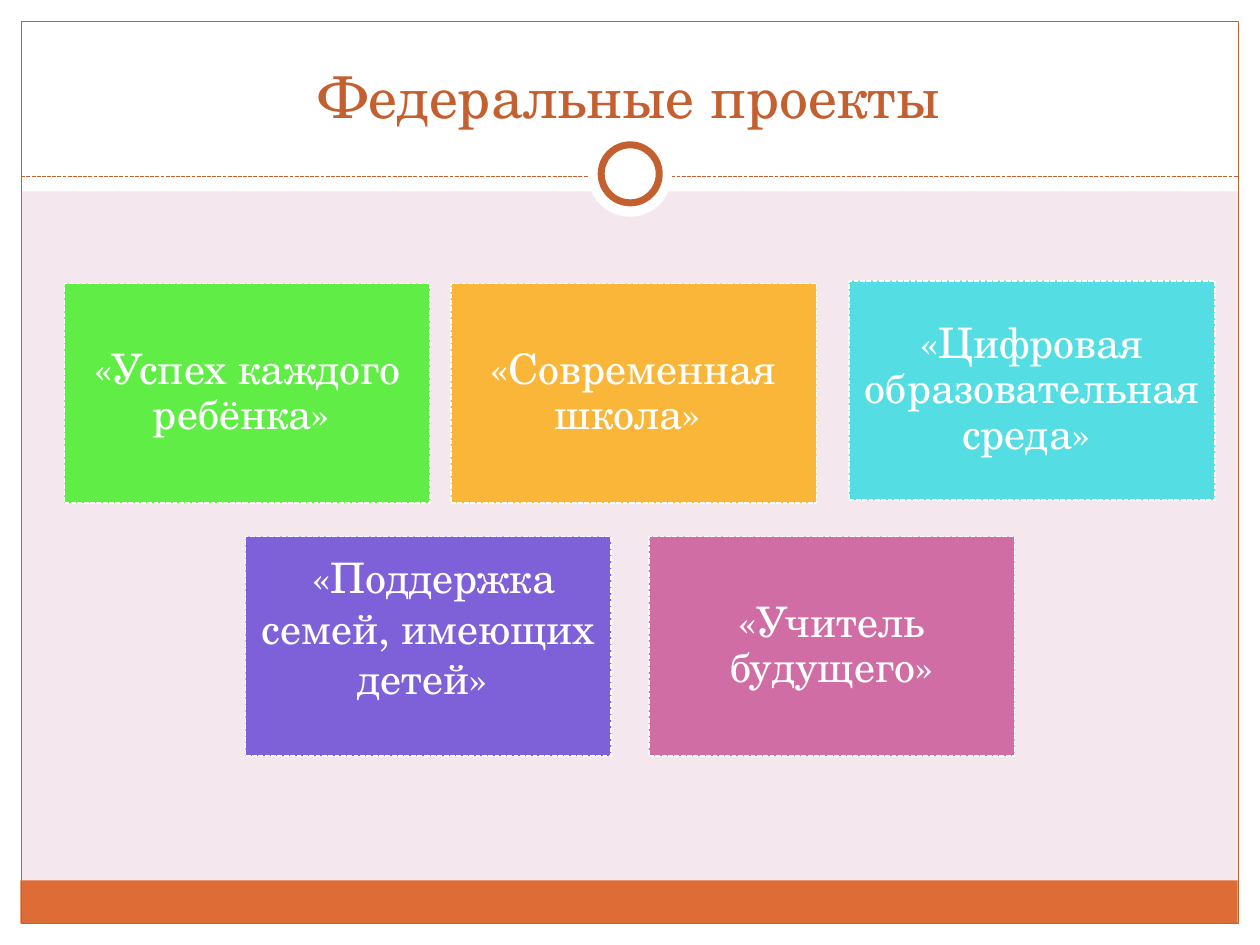
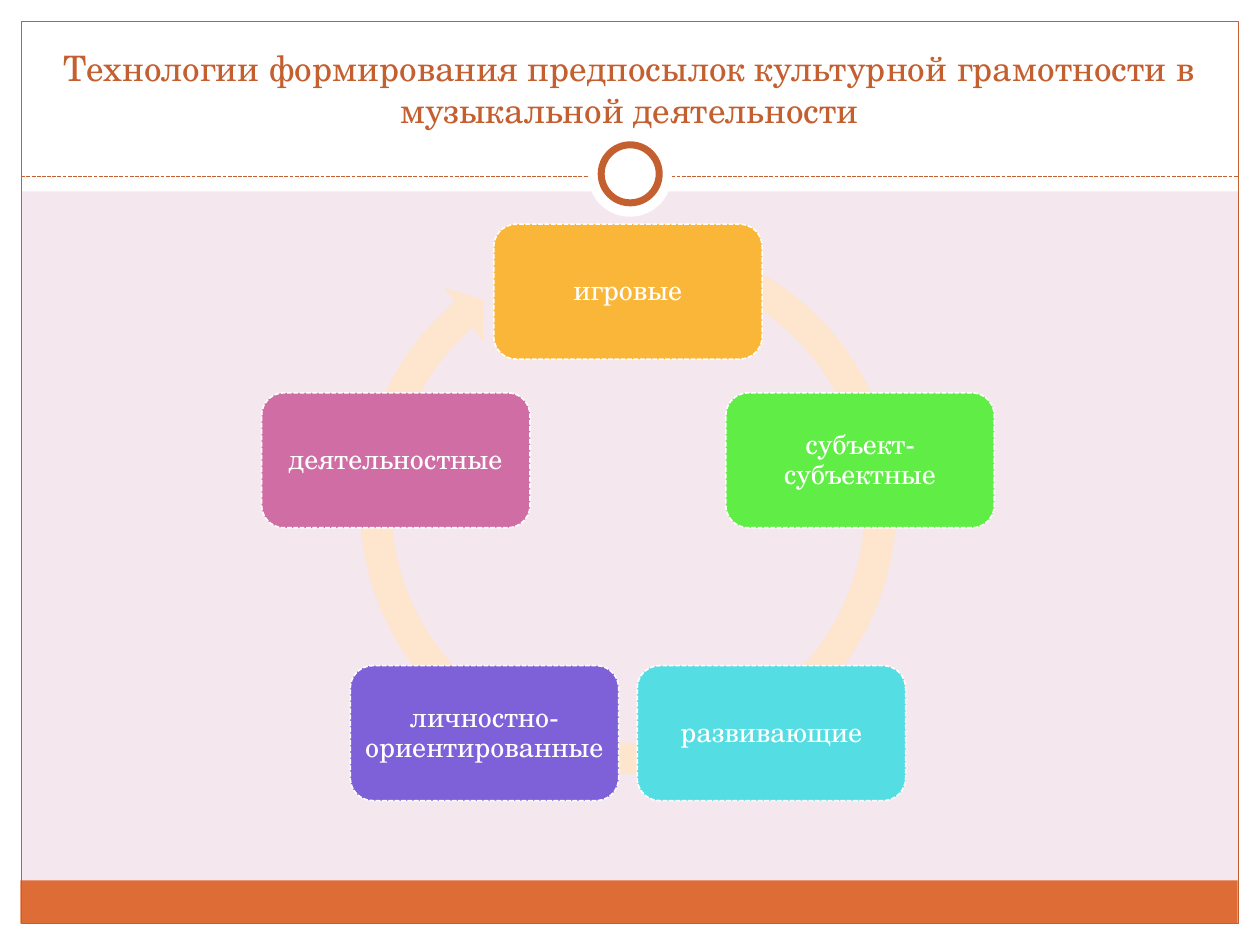
from math import cos, pi, sin

from lxml import etree
from pptx import Presentation
from pptx.dml.color import RGBColor
from pptx.enum.dml import MSO_LINE
from pptx.enum.shapes import MSO_CONNECTOR, MSO_SHAPE
from pptx.enum.text import MSO_ANCHOR, MSO_AUTO_SIZE, PP_ALIGN
from pptx.oxml.ns import qn
from pptx.util import Cm, Pt

RECTANGLE = MSO_SHAPE.RECTANGLE
ROUNDED = MSO_SHAPE.ROUNDED_RECTANGLE
OVAL = MSO_SHAPE.OVAL
CIRCULAR_ARROW = MSO_SHAPE.CIRCULAR_ARROW
DASH = MSO_LINE.SQUARE_DOT
CENTER = PP_ALIGN.CENTER
MIDDLE = MSO_ANCHOR.MIDDLE
BOTTOM = MSO_ANCHOR.BOTTOM
NO_AUTOFIT = MSO_AUTO_SIZE.NONE


class Theme:
    font = "TeX Gyre Schola"
    background = RGBColor.from_string("F4E7ED")
    white = RGBColor.from_string("FFFFFF")
    accent = RGBColor.from_string("C45F30")
    footer = RGBColor.from_string("DE6C36")
    ring = RGBColor.from_string("FDE5CE")
    orange = RGBColor.from_string("F9B639")
    green = RGBColor.from_string("60EE46")
    cyan = RGBColor.from_string("54DDE3")
    violet = RGBColor.from_string("7E60D9")
    pink = RGBColor.from_string("CF6DA4")
    title_size = Pt(33)
    long_title_size = Pt(20)
    card_size = Pt(24)
    step_size = Pt(16)
    hairline = Pt(0.75)
    card_line = Pt(0.9)
    ring_line = Pt(4)


def add_box(slide, kind, place, fill=None, line=None, width=None, dash=None):
    shape = slide.shapes.add_shape(kind, *[Cm(length) for length in place])
    shape.shadow.inherit = False
    for part, color in ((shape.fill, fill), (shape.line.fill, line)):
        if color is None:
            part.background()
        else:
            part.solid()
            part.fore_color.rgb = color
    if line is not None:
        shape.line.width = width
        shape.line.dash_style = dash
    return shape


def write_text(shape, text, size, color, frame_format, line_spacing=None):
    frame = shape.text_frame
    for name, value in frame_format.items():
        setattr(frame, name, value)
    paragraph = frame.paragraphs[0]
    paragraph.alignment = CENTER
    paragraph.line_spacing = line_spacing
    run = paragraph.add_run()
    run.text = text
    run.font.color.rgb = color
    for name, value in {"name": Theme.font, "size": size}.items():
        setattr(run.font, name, value)


presentation = Presentation()
presentation.slide_width = Cm(25.4)
presentation.slide_height = Cm(19.05)
layout = presentation.slide_layouts[5]
layout.background.fill.solid()
layout.background.fill.fore_color.rgb = Theme.background

layout_title = layout.placeholders[0]
title_place = {"left": Cm(0.84), "top": Cm(0.64), "width": Cm(23.7), "height": Cm(2.11)}
for name, value in title_place.items():
    setattr(layout_title, name, value)

titles = [
    ("Федеральные проекты", Theme.title_size),
    (
        "Технологии формирования предпосылок культурной грамотности в музыкальной деятельности",
        Theme.long_title_size,
    ),
]
title_format = {"vertical_anchor": BOTTOM, "word_wrap": True, "auto_size": NO_AUTOFIT}
for text, size in titles:
    slide = presentation.slides.add_slide(layout)
    write_text(slide.shapes.title, text, size, Theme.accent, title_format)
projects_slide, technologies_slide = presentation.slides

margins = [
    (0, 18.62, 25.4, 0.43),
    (0, 0, 25.4, 3.86),
    (0, 0, 0.43, 19.05),
    (24.97, 0, 0.43, 19.05),
]
decor = [add_box(projects_slide, RECTANGLE, place, Theme.white) for place in margins]
decor.append(add_box(projects_slide, RECTANGLE, (0.41, 17.75, 24.54, 0.87), Theme.footer))
decor.append(
    add_box(projects_slide, RECTANGLE, (0.43, 0.43, 24.54, 18.19), None, Theme.accent, Theme.hairline)
)
divider = projects_slide.shapes.add_connector(
    MSO_CONNECTOR.STRAIGHT, Cm(0.43), Cm(3.56), Cm(24.97), Cm(3.56)
)
divider.line.color.rgb = Theme.accent
divider.line.width = Theme.hairline
divider.line.dash_style = DASH
etree.SubElement(divider.element.spPr, qn("a:effectLst"))
decor.append(divider)
decor.append(add_box(projects_slide, OVAL, (11.85, 2.67, 1.7, 1.7), Theme.white))
decor.append(
    add_box(projects_slide, OVAL, (12.12, 2.92, 1.17, 1.17), Theme.white, Theme.accent, Theme.ring_line)
)
for shape in decor:
    layout_title.element.addprevious(shape.element)

card_line = {"line": Theme.white, "width": Theme.card_line, "dash": DASH}
card_format = {
    "vertical_anchor": MIDDLE,
    "word_wrap": True,
    "margin_left": Cm(0.25),
    "margin_right": Cm(0.25),
    "margin_top": Cm(0.25),
    "margin_bottom": Cm(0.25),
}
raised_format = card_format | {"margin_bottom": Cm(1.02)}
projects = [
    ("«Современная школа» ", 9.09, 5.72, Theme.orange, card_format, 0.9),
    ("«Успех каждого ребёнка» ", 1.3, 5.72, Theme.green, card_format, 0.9),
    ("«Цифровая образовательная среда» ", 17.12, 5.66, Theme.cyan, card_format, 0.9),
    (" «Поддержка семей, имеющих детей» ", 4.95, 10.82, Theme.violet, raised_format, 1.0),
    ("«Учитель будущего»", 13.08, 10.82, Theme.pink, card_format, 0.9),
]
for text, left, top, color, frame_format, spacing in projects:
    card = add_box(projects_slide, RECTANGLE, (left, top, 7.37, 4.42), color, **card_line)
    write_text(card, text, Theme.card_size, Theme.white, frame_format, spacing)

cycle_arrow = add_box(technologies_slide, CIRCULAR_ARROW, (6.91, 4.45, 11.51, 11.51), Theme.ring)
for index, value in enumerate((0.055, 3.307, 137.628, 173.94, 0.058)):
    cycle_arrow.adjustments[index] = value

technologies = [
    ("игровые", Theme.orange),
    ("субъект-субъектные", Theme.green),
    ("развивающие", Theme.cyan),
    ("личностно-ориентированные", Theme.violet),
    ("деятельностные", Theme.pink),
]
center_x, center_y, radius = 12.66, 10.8, 4.92
step_width, step_height = 5.41, 2.72
step_format = card_format | {"margin_left": Cm(0.1), "margin_right": Cm(0.1)}
for index, (text, color) in enumerate(technologies):
    angle = 2 * pi * index / len(technologies)
    left = center_x + radius * sin(angle) - step_width / 2
    top = center_y - radius * cos(angle) - step_height / 2
    step = add_box(
        technologies_slide, ROUNDED, (left, top, step_width, step_height), color, **card_line
    )
    write_text(step, text, Theme.step_size, Theme.white, step_format, 0.9)

presentation.save("out.pptx")
